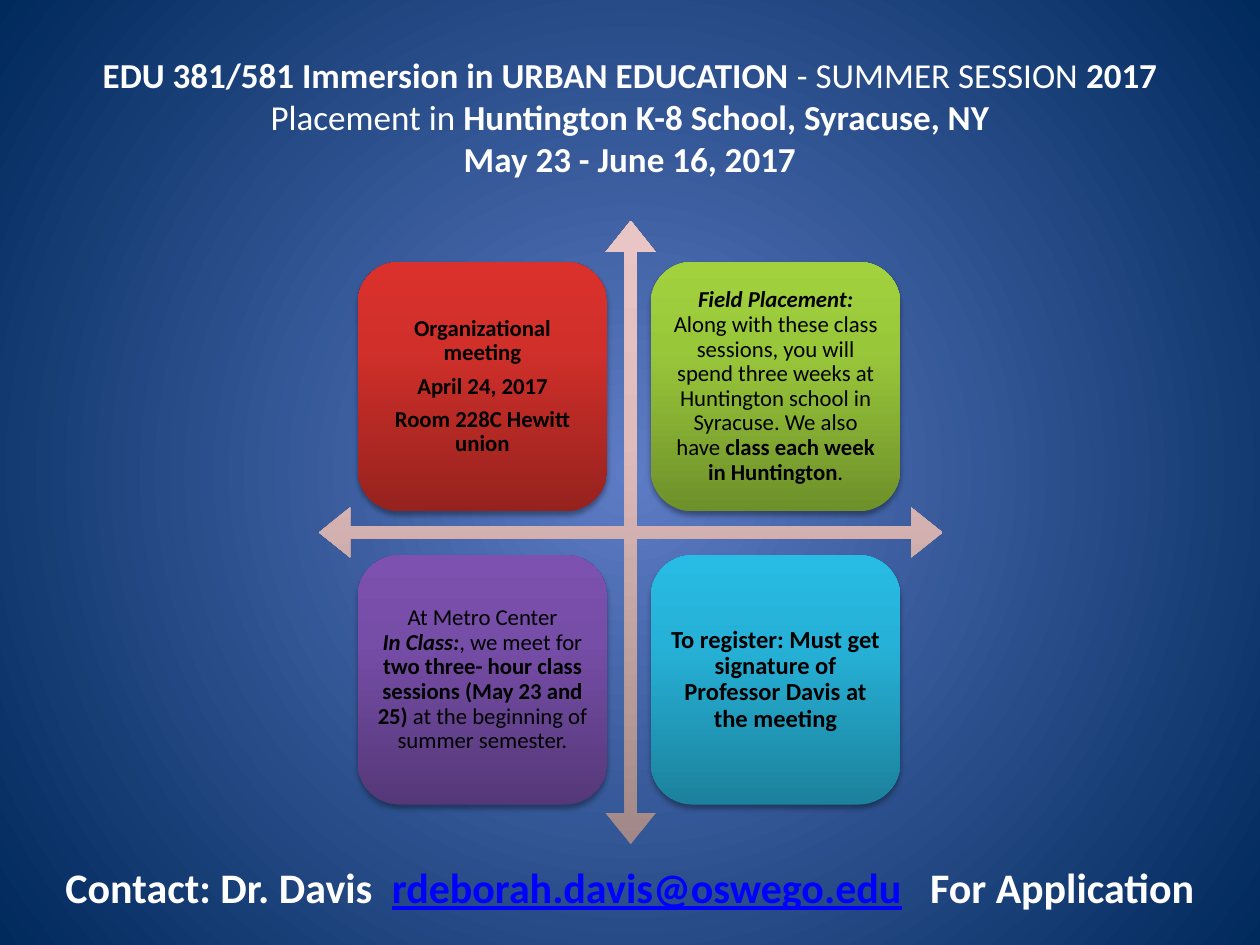
from lxml import etree
from pptx import Presentation
from pptx import util as u
from pptx.dml.color import RGBColor
from pptx.enum import shapes, text
from pptx.oxml import ns

WHITE, BLACK, BLUE = "FFFFFF", "000000", "0000FF"
BACK = [(0, "5E7CC5"), (100, "00295C")]
CROSS = [(0, "A18787"), (65, "DFBCBB"), (100, "EAC5C5")]

TITLE = [
    [("EDU 381/581 Immersion in URBAN EDUCATION ", "b"),
     ("- SUMMER SESSION ", ""), ("2017", "b")],
    [("Placement in ", ""), ("Huntington K-8 School, Syracuse, NY", "b")],
    [("May 23 - June 16, 2017", "b")],
]
CARDS = [
    {"stops": ("96221E", "D02F2A", "DB312C"), "size": 13, "gap": 5, "paras": [
        [("Organizational meeting", "b")],
        [("April 24, 2017", "b")],
        [("Room 228C Hewitt union", "b")]]},
    {"stops": ("6E902A", "99C73A", "A1D13D"), "size": 13, "gap": 5, "paras": [
        [("Field Placement: ", "bi"),
         ("Along with these class sessions, you will spend three weeks at "
          "Huntington school in Syracuse. We also have ", ""),
         ("class each week in Huntington", "b"), (".", "")]]},
    {"stops": ("553878", "764DA7", "7C51AF"), "size": 13, "gap": 0, "paras": [
        [("At Metro Center", "")],
        [("In Class:", "bi"), (", we meet for ", ""),
         ("two three- hour class sessions (May 23 and 25)", "b"),
         (" at the beginning of summer semester.", "")]]},
    {"stops": ("1C819C", "26B2D8", "28BBE3"), "size": 14, "gap": 5, "paras": [
        [("To register: Must get signature of Professor Davis at the meeting", "b")]]},
]
FOOT = [[("Contact: Dr. Davis\t", "b"), ("rdeborah.davis@oswego.edu", "bu"),
         ("\tFor Application", "b")]]
TABS = [6.58, 17.43]
LEFT, TOP, SIDE, STEP = 7.21, 5.28, 5.03, 5.91


def color(code):
    return RGBColor.from_string(code)


def add(node, tag, **attrs):
    child = etree.SubElement(node, ns.qn(tag))
    for key, val in attrs.items():
        child.set(key, str(val))
    return child


def shade(owner, stops, round_fill=False):
    grad = owner.element.find(".//" + ns.qn("a:gradFill"))
    for child in list(grad):
        grad.remove(child)
    group = add(grad, "a:gsLst")
    for pos, code in stops:
        add(add(group, "a:gs", pos=pos * 1000), "a:srgbClr", val=code)
    if round_fill:
        rect = add(grad, "a:path", path="circle")
        add(rect, "a:fillToRect", l=100000, t=100000, r=100000, b=100000)
    else:
        add(grad, "a:lin", ang=270 * 60000, scaled=0)


def cast(shape):
    effects = shape.element.spPr.find(ns.qn("a:effectLst"))
    drop = add(effects, "a:outerShdw", blurRad=u.Pt(3.1), dist=u.Pt(2),
               dir=90 * 60000, rotWithShape=0)
    add(add(drop, "a:srgbClr", val=BLACK), "a:alpha", val=35000)


def draw(slide, kind, x, y, side, stops):
    shape = slide.shapes.add_shape(kind, u.Cm(x), u.Cm(y), u.Cm(side), u.Cm(side))
    shape.shadow.inherit = False
    shape.line.fill.background()
    shape.fill.gradient()
    shade(shape, stops)
    return shape


def write(frame, paras, size, code, line=1.0, gap=0, align=text.PP_ALIGN.CENTER, tabs=()):
    frame.word_wrap = True
    frame.vertical_anchor = text.MSO_ANCHOR.MIDDLE
    for num, runs in enumerate(paras):
        para = frame.paragraphs[0] if num == 0 else frame.add_paragraph()
        para.alignment = align
        para.line_spacing = line
        para.space_after = u.Pt(gap)
        if tabs:
            stops = add(para._p.get_or_add_pPr(), "a:tabLst")
            for pos in tabs:
                add(stops, "a:tab", pos=u.Cm(pos), algn="l")
        para.font.name = "Calibri"
        para.font.size = u.Pt(size)
        for words, style in runs:
            run = para.add_run()
            run.text = words
            run.font.bold = "b" in style
            run.font.italic = "i" in style
            run.font.underline = "u" in style
            run.font.color.rgb = color(BLUE if "u" in style else code)


def label(slide, x, y, w, h):
    return slide.shapes.add_textbox(u.Cm(x), u.Cm(y), u.Cm(w), u.Cm(h)).text_frame


def main():
    deck = Presentation()
    deck.slide_width, deck.slide_height = u.Cm(25.4), u.Cm(19.05)
    slide = deck.slides.add_slide(deck.slide_layouts[6])
    slide.background.fill.gradient()
    shade(slide, BACK, True)

    write(label(slide, 1.27, 0.76, 22.86, 3.18), TITLE, 20, WHITE)

    cross = draw(slide, shapes.MSO_SHAPE.QUAD_ARROW, 6.43, 4.45, 12.57, CROSS)
    for num, val in enumerate((0.02, 0.04, 0.05)):
        cross.adjustments[num] = val

    for num, card in enumerate(CARDS):
        row, col = divmod(num, 2)
        stops = list(zip((0, 65, 100), card["stops"]))
        box = draw(slide, shapes.MSO_SHAPE.ROUNDED_RECTANGLE,
                   LEFT + col * STEP, TOP + row * STEP, SIDE, stops)
        cast(box)
        frame = box.text_frame
        frame.margin_left = frame.margin_right = u.Cm(0.13)
        frame.margin_top = frame.margin_bottom = u.Cm(0.13)
        write(frame, card["paras"], card["size"], BLACK, 0.9, card["gap"])

    foot = label(slide, 0.43, 17.25, 24.56, 1.27)
    foot.margin_left = u.Cm(0.89)
    write(foot, FOOT, 24, WHITE, align=text.PP_ALIGN.LEFT, tabs=TABS)
    deck.save("out.pptx")


if __name__ == "__main__":
    main()
